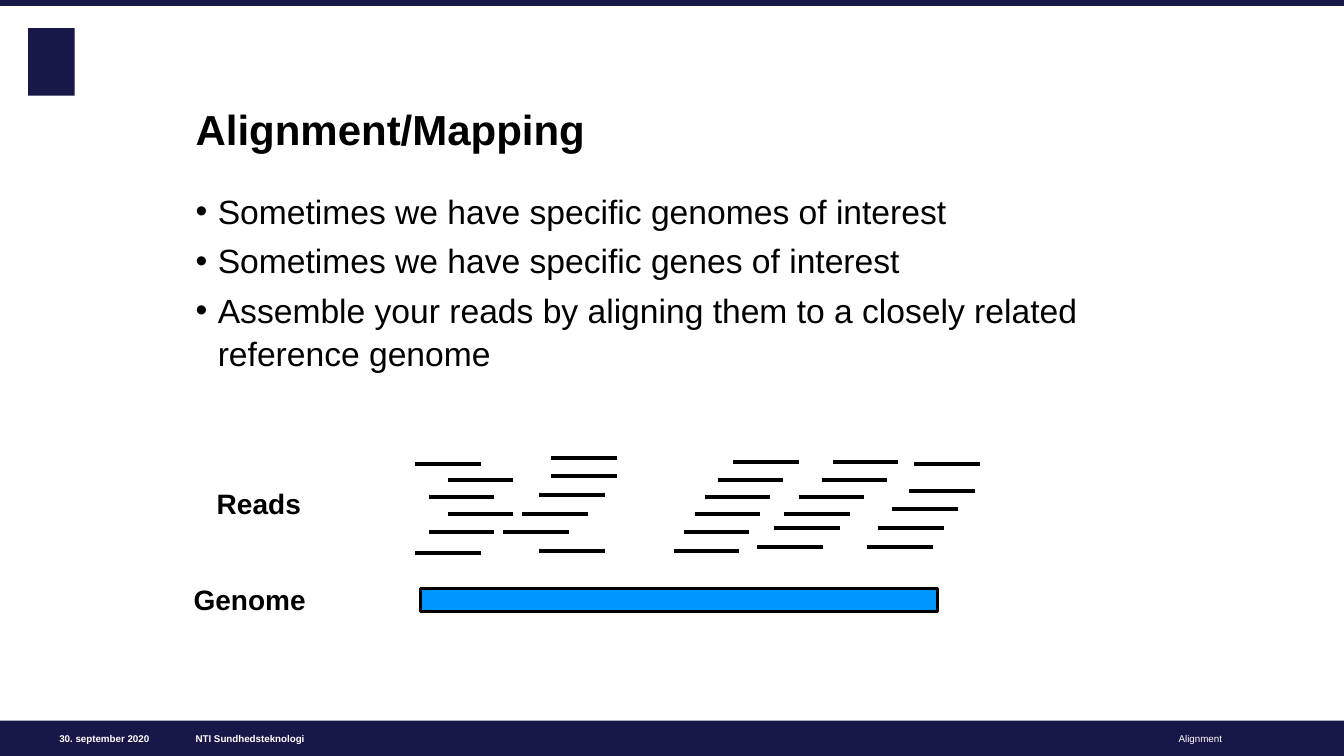
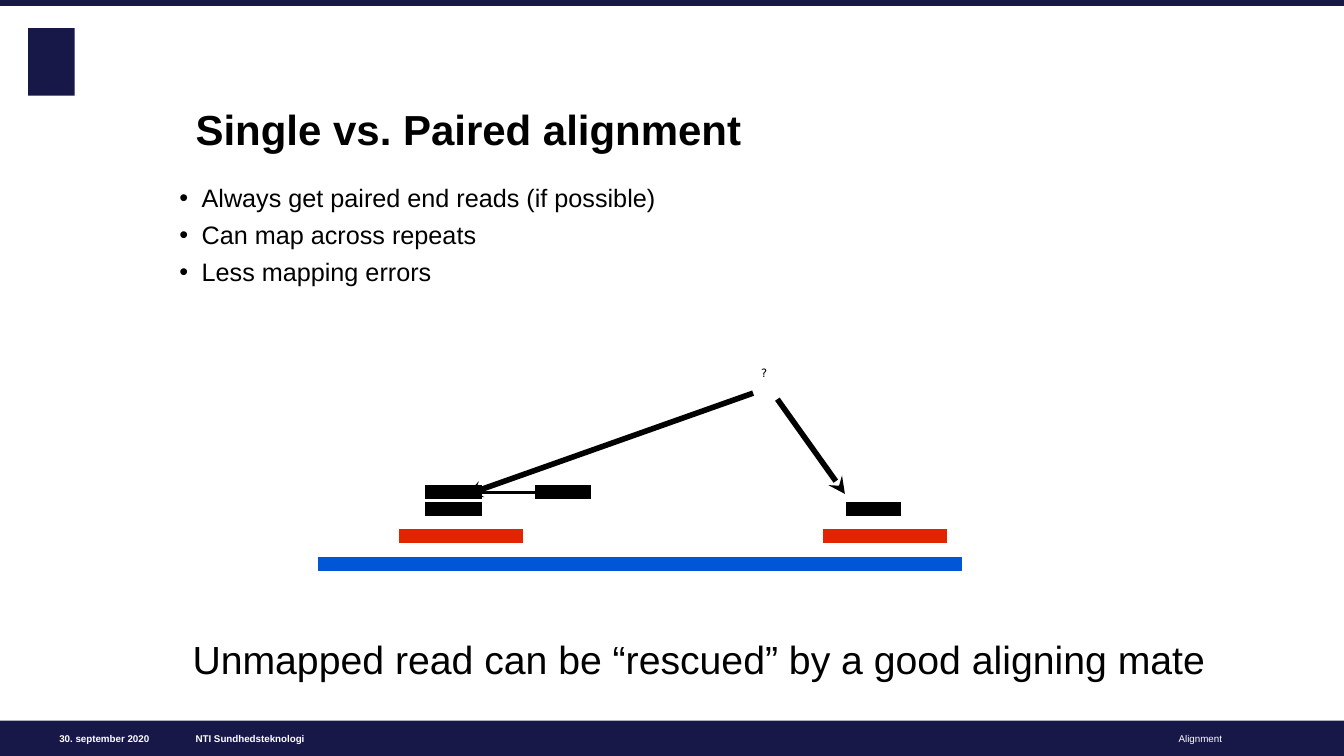
import dataclasses
import typing

import pptx
import pptx.dml.color
import pptx.enum.shapes
import pptx.enum.text
import pptx.oxml.ns
import pptx.presentation
import pptx.shapes.autoshape
import pptx.shapes.shapetree
import pptx.slide
import pptx.text.text
import pptx.util
from lxml import etree

NAVY = pptx.dml.color.RGBColor(0x17, 0x17, 0x48)
WHITE = pptx.dml.color.RGBColor(0xFF, 0xFF, 0xFF)
BLACK = pptx.dml.color.RGBColor(0x00, 0x00, 0x00)
GENOME_BLUE = pptx.dml.color.RGBColor(0x00, 0x96, 0xFF)
REFERENCE_BLUE = pptx.dml.color.RGBColor(0x00, 0x56, 0xD6)
REPEAT_RED = pptx.dml.color.RGBColor(0xE3, 0x24, 0x00)

SLIDE_WIDTH, SLIDE_HEIGHT = 13.33, 7.5
FOOTER_TOP, FOOTER_HEIGHT = 7.15, 0.35
READ_LENGTH = 0.65
LINE_SPACING = 1.06
BULLET_INDENT = 0.22

LEFT = pptx.enum.text.PP_ALIGN.LEFT
RIGHT = pptx.enum.text.PP_ALIGN.RIGHT
TOP = pptx.enum.text.MSO_ANCHOR.TOP
MIDDLE = pptx.enum.text.MSO_ANCHOR.MIDDLE
BOTTOM = pptx.enum.text.MSO_ANCHOR.BOTTOM

Canvas = typing.Union[
    pptx.shapes.shapetree.SlideShapes, pptx.shapes.shapetree.GroupShapes
]


@dataclasses.dataclass(frozen=True)
class Box:
    left: float
    top: float
    width: float
    height: float

    def lengths(self) -> dict[str, pptx.util.Length]:
        return {
            name: pptx.util.Inches(value)
            for name, value in dataclasses.asdict(self).items()
        }


@dataclasses.dataclass(frozen=True)
class Label:
    text: str
    box: Box
    size: float
    bold: bool = False
    color: pptx.dml.color.RGBColor = BLACK
    alignment: pptx.enum.text.PP_ALIGN = LEFT
    inset: float = 0.03
    font: str = "Arial"


@dataclasses.dataclass(frozen=True)
class Stroke:
    start: tuple[float, float]
    end: tuple[float, float]
    width: float
    color: pptx.dml.color.RGBColor = BLACK
    arrow: bool = False


FOOTERS = (
    Label("NTI Sundhedsteknologi", Box(1.94, FOOTER_TOP, 3.72, FOOTER_HEIGHT),
          7, True, WHITE, LEFT, 0),
    Label("30. september 2020", Box(0.27, FOOTER_TOP, 1.21, FOOTER_HEIGHT),
          7, True, WHITE, RIGHT, 0),
    Label("Alignment", Box(6.11, FOOTER_TOP, 6.01, FOOTER_HEIGHT),
          7, False, WHITE, RIGHT, 0),
)
NAVY_BLOCKS = (
    Box(0, FOOTER_TOP, SLIDE_WIDTH, FOOTER_HEIGHT),
    Box(0, 0, SLIDE_WIDTH, 0.06),
    Box(0.28, 0.28, 0.46, 0.67),
)
TITLE_BOX = Box(1.94, 0.47, 10.18, 1.06)

READ_STARTS = (
    (4.12, 5.49), (4.25, 5.28), (4.44, 5.1), (4.25, 4.93), (4.44, 4.76), (4.12, 4.6),
    (5.35, 5.47), (4.99, 5.28), (5.18, 5.1), (5.35, 4.91), (5.47, 4.72), (5.47, 4.54),
    (6.68, 5.47), (6.78, 5.28), (6.89, 5.1), (6.99, 4.93), (7.12, 4.76), (7.27, 4.58),
    (7.51, 5.43), (7.68, 5.24), (7.78, 5.1), (7.92, 4.93), (8.15, 4.76), (8.26, 4.58),
    (8.6, 5.43), (8.71, 5.24), (8.85, 5.05), (9.02, 4.87), (9.07, 4.6),
)
MAPPING_LABELS = (
    Label("Reads", Box(2.12, 4.8, 0.9, 0.39), 20, True),
    Label("Genome", Box(1.89, 5.75, 1.18, 0.39), 20, True),
)

PAIRED_STROKES = (
    Stroke((3.15, 5.6), (9.54, 5.6), 10, REFERENCE_BLUE),
    Stroke((8.16, 5.32), (9.39, 5.32), 10, REPEAT_RED),
    Stroke((3.96, 5.32), (5.19, 5.32), 10, REPEAT_RED),
    Stroke((4.22, 5.05), (4.78, 5.05), 10),
    Stroke((7.47, 3.9), (4.62, 4.91), 4, arrow=True),
    Stroke((7.71, 3.96), (8.38, 4.9), 4, arrow=True),
    Stroke((8.39, 5.05), (8.94, 5.05), 10),
    Stroke((4.22, 4.88), (4.78, 4.88), 10),
    Stroke((4.54, 4.89), (5.55, 4.89), 2),
    Stroke((5.31, 4.88), (5.86, 4.88), 10),
)
PAIRED_LABELS = (
    Label("?", Box(7.52, 3.6, 0.12, 0.2), 8.2, font="DejaVu Sans"),
    Label("Unmapped read can be “rescued” by a good aligning mate",
          Box(1.88, 6.27, 10.24, 0.53), 28),
)


def apply(target: object, values: dict[str, typing.Any]) -> None:
    for name, value in values.items():
        setattr(target, name, value)


def format_frame(
    frame: pptx.text.text.TextFrame,
    anchor: pptx.enum.text.MSO_ANCHOR,
    inset: float = 0,
    wrap: bool = True,
) -> None:
    sides = ("left", "top", "right", "bottom")
    apply(frame, {f"margin_{side}": pptx.util.Inches(inset) for side in sides})
    apply(frame, {
        "vertical_anchor": anchor,
        "word_wrap": wrap,
        "auto_size": pptx.enum.text.MSO_AUTO_SIZE.NONE,
    })


def format_paragraph(
    paragraph: pptx.text.text._Paragraph,
    size: float,
    bold: bool = False,
    color: pptx.dml.color.RGBColor = BLACK,
    alignment: pptx.enum.text.PP_ALIGN = LEFT,
    font: str = "Arial",
) -> None:
    paragraph.alignment = alignment
    for run in paragraph.runs:
        apply(run.font, {"name": font, "size": pptx.util.Pt(size), "bold": bold})
        run.font.color.rgb = color


def add_label(shapes: Canvas, label: Label) -> None:
    frame = shapes.add_textbox(**label.box.lengths()).text_frame
    frame.text = label.text
    format_frame(frame, MIDDLE, label.inset, wrap=False)
    format_paragraph(frame.paragraphs[0], label.size, label.bold, label.color,
                     label.alignment, label.font)


def add_block(
    shapes: Canvas, box: Box, color: pptx.dml.color.RGBColor
) -> pptx.shapes.autoshape.Shape:
    shape = shapes.add_shape(
        pptx.enum.shapes.MSO_SHAPE.RECTANGLE, **box.lengths()
    )
    shape.shadow.inherit = False
    shape.fill.solid()
    shape.fill.fore_color.rgb = color
    shape.line.fill.background()
    return shape


def add_stroke(shapes: Canvas, stroke: Stroke) -> None:
    connector = shapes.add_connector(
        pptx.enum.shapes.MSO_CONNECTOR.STRAIGHT,
        *(pptx.util.Inches(value) for value in stroke.start + stroke.end),
    )
    connector.line.width = pptx.util.Pt(stroke.width)
    connector.line.color.rgb = stroke.color
    properties = connector.element.spPr
    if stroke.arrow:
        outline = properties.find(pptx.oxml.ns.qn("a:ln"))
        etree.SubElement(outline, pptx.oxml.ns.qn("a:tailEnd"), type="stealth")
    etree.SubElement(properties, pptx.oxml.ns.qn("a:effectLst"))


def add_slide(
    presentation: pptx.presentation.Presentation,
    title: str,
    bullets: tuple[str, ...],
    body_box: Box,
    bullet_size: float,
) -> pptx.slide.Slide:
    slide = presentation.slides.add_slide(presentation.slide_layouts[1])
    for block in NAVY_BLOCKS:
        add_block(slide.shapes, block, NAVY)
    for footer in FOOTERS:
        add_label(slide.shapes, footer)

    heading = slide.shapes.title
    apply(heading, TITLE_BOX.lengths())
    heading.text_frame.text = title
    format_frame(heading.text_frame, BOTTOM)
    format_paragraph(heading.text_frame.paragraphs[0], 30, True)

    body = slide.placeholders[1]
    apply(body, body_box.lengths())
    body.text_frame.text = "\n".join(bullets)
    format_frame(body.text_frame, TOP)
    indent = pptx.util.Inches(BULLET_INDENT)
    for paragraph in body.text_frame.paragraphs:
        format_paragraph(paragraph, bullet_size)
        apply(paragraph, {
            "space_before": pptx.util.Pt(bullet_size * 0.2),
            "line_spacing": LINE_SPACING,
        })
        properties = paragraph._p.get_or_add_pPr()
        properties.set("marL", str(int(indent)))
        properties.set("indent", str(-int(indent)))
    return slide


def add_mapping_slide(presentation: pptx.presentation.Presentation) -> None:
    slide = add_slide(
        presentation,
        "Alignment/Mapping",
        (
            "Sometimes we have specific genomes of interest",
            "Sometimes we have specific genes of interest",
            "Assemble your reads by aligning them to a closely related reference genome",
        ),
        Box(1.94, 1.87, 10.18, 4.97),
        24,
    )
    diagram = slide.shapes.add_group_shape().shapes
    genome = add_block(diagram, Box(4.17, 5.84, 5.13, 0.23), GENOME_BLUE)
    genome.line.color.rgb = BLACK
    genome.line.width = pptx.util.Pt(2)
    for left, top in READ_STARTS:
        add_stroke(diagram, Stroke((left, top), (left + READ_LENGTH, top), 3))
    for label in MAPPING_LABELS:
        add_label(slide.shapes, label)


def add_paired_slide(presentation: pptx.presentation.Presentation) -> None:
    slide = add_slide(
        presentation,
        "Single vs. Paired alignment",
        (
            "Always get paired end reads (if possible)",
            "Can map across repeats",
            "Less mapping errors",
        ),
        Box(1.78, 1.79, 9.76, 1.89),
        18,
    )
    for stroke in PAIRED_STROKES:
        add_stroke(slide.shapes, stroke)
    for label in PAIRED_LABELS:
        add_label(slide.shapes, label)


def main() -> None:
    presentation = pptx.Presentation()
    apply(presentation, {
        "slide_width": pptx.util.Inches(SLIDE_WIDTH),
        "slide_height": pptx.util.Inches(SLIDE_HEIGHT),
    })
    add_mapping_slide(presentation)
    add_paired_slide(presentation)
    presentation.save("out.pptx")


if __name__ == "__main__":
    main()
